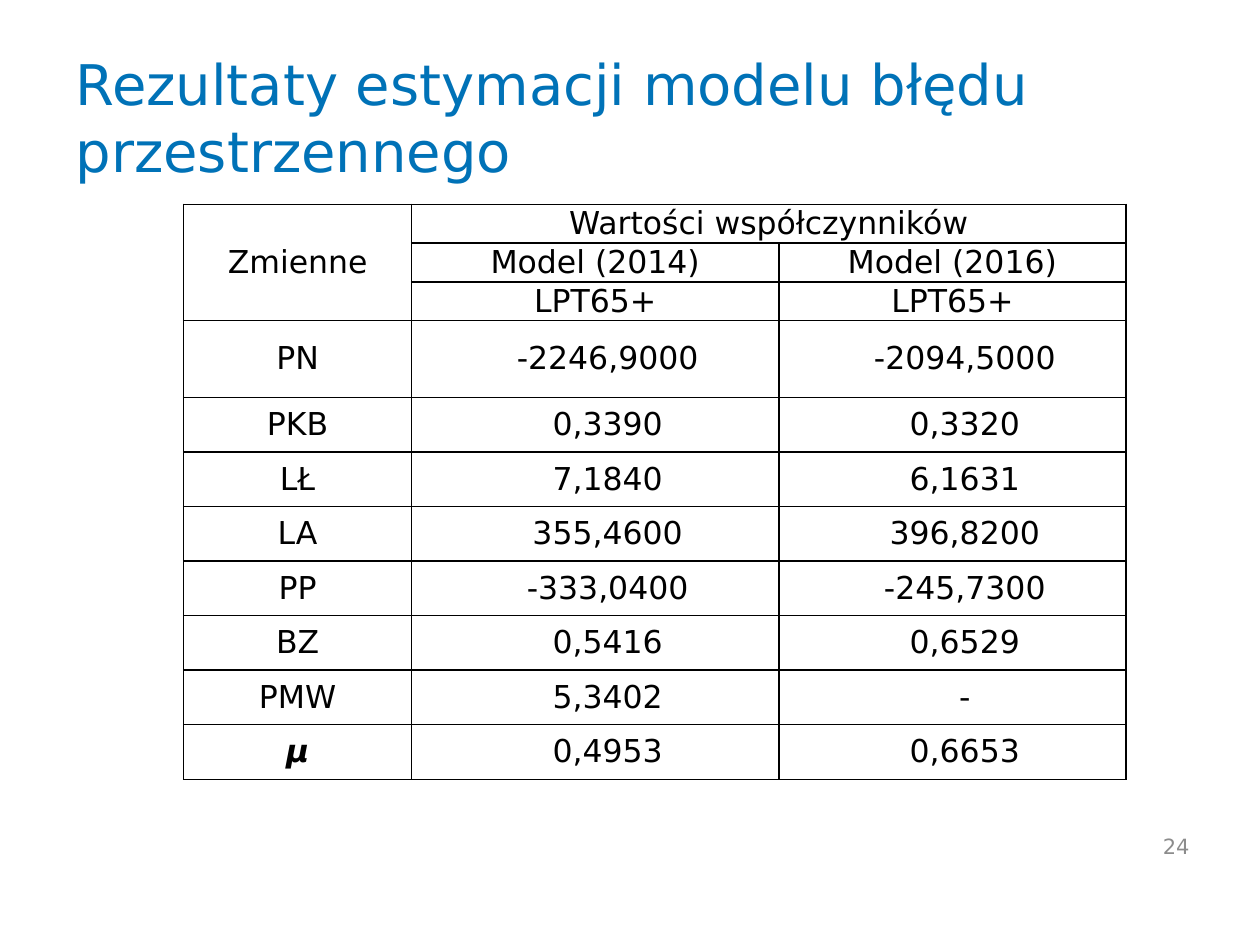
"""Build the slide with the results of the spatial error model."""
from lxml import etree
from pptx import Presentation
from pptx.dml.color import RGBColor
from pptx.enum.text import MSO_ANCHOR, PP_ALIGN
from pptx.oxml.ns import qn
from pptx.util import Cm, Pt

LEFT, CENTER, RIGHT = PP_ALIGN.LEFT, PP_ALIGN.CENTER, PP_ALIGN.RIGHT
MIDDLE = MSO_ANCHOR.MIDDLE

THEME = {
    "font": "DejaVu Sans",
    "title": {"size": 32, "color": "0072B7"},
    "table": {"size": 18, "color": "000000"},
    "number": {"size": 12, "color": "8C8C8C"},
    "border": {"width": 1, "color": "000000"},
}

ROWS = [
    ("Zmienne", "Wartości współczynników", ""),
    ("", "Model (2014)", "Model (2016)"),
    ("", "LPT65+", "LPT65+"),
    ("PN", "-2246,9000", "-2094,5000"),
    ("PKB", "0,3390", "0,3320"),
    ("LŁ", "7,1840", "6,1631"),
    ("LA", "355,4600", "396,8200"),
    ("PP", "-333,0400", "-245,7300"),
    ("BZ", "0,5416", "0,6529"),
    ("PMW", "5,3402", "-"),
    ("μ", "0,4953", "0,6653"),
]
HEAD = 3
WIDTHS = [4.6, 7.4, 7.0]
HEIGHTS = [0.78] * HEAD + [1.55] + [1.1] * 7


def write(frame, text, style, align):
    """Put one styled paragraph into a text frame."""
    para = frame.paragraphs[0]
    para.alignment = align
    run = para.add_run()
    run.text = text
    look = {"name": THEME["font"], "size": Pt(style["size"]), "bold": False}
    for key, value in look.items():
        setattr(run.font, key, value)
    run.font.color.rgb = RGBColor.from_string(style["color"])
    return para


def frame_cell(cell):
    """Draw the four borders of a table cell."""
    props = cell._tc.get_or_add_tcPr()
    width = str(Pt(THEME["border"]["width"]))
    for side in ("lnL", "lnR", "lnT", "lnB"):
        line = etree.SubElement(props, qn(f"a:{side}"), w=width)
        fill = etree.SubElement(line, qn("a:solidFill"))
        etree.SubElement(fill, qn("a:srgbClr"), val=THEME["border"]["color"])


deck = Presentation()
deck.slide_width, deck.slide_height = Cm(25.4), Cm(19.05)
slide = deck.slides.add_slide(deck.slide_layouts[5])

title = slide.shapes.title
place = {"left": Cm(1.27), "top": Cm(0.76), "width": Cm(22.86), "height": Cm(3.18)}
for key, value in place.items():
    setattr(title, key, value)
title.text_frame.vertical_anchor = MIDDLE
write(title.text_frame, "Rezultaty estymacji modelu błędu przestrzennego",
      THEME["title"], LEFT)

table = slide.shapes.add_table(
    len(ROWS), len(WIDTHS), Cm(3.7), Cm(4.12), Cm(sum(WIDTHS)), Cm(sum(HEIGHTS))
).table
table.first_row = False
table.horz_banding = False
for column, width in zip(table.columns, WIDTHS):
    column.width = Cm(width)
for row, height in zip(table.rows, HEIGHTS):
    row.height = Cm(height)

for r, row in enumerate(ROWS):
    for c, text in enumerate(row):
        cell = table.cell(r, c)
        frame_cell(cell)
        cell.fill.background()
        side = Cm(0.13 if c else 0.05)
        form = {"margin_left": side, "margin_right": side, "margin_top": 0,
                "margin_bottom": 0, "vertical_anchor": MIDDLE}
        for key, value in form.items():
            setattr(cell, key, value)
        if text:
            para = write(cell.text_frame, text, THEME["table"], CENTER)
            if r >= HEAD and c:
                para._p.get_or_add_pPr().set("indent", str(Cm(0.5)))
            if text == "μ":
                font = para.runs[0].font
                font.bold = font.italic = True

table.cell(0, 0).merge(table.cell(HEAD - 1, 0))
table.cell(0, 1).merge(table.cell(0, 2))

number = slide.shapes.add_textbox(Cm(22.5), Cm(16.54), Cm(1.73), Cm(1.02)).text_frame
number.word_wrap = True
number.vertical_anchor = MIDDLE
write(number, "24", THEME["number"], RIGHT)

deck.save("out.pptx")
